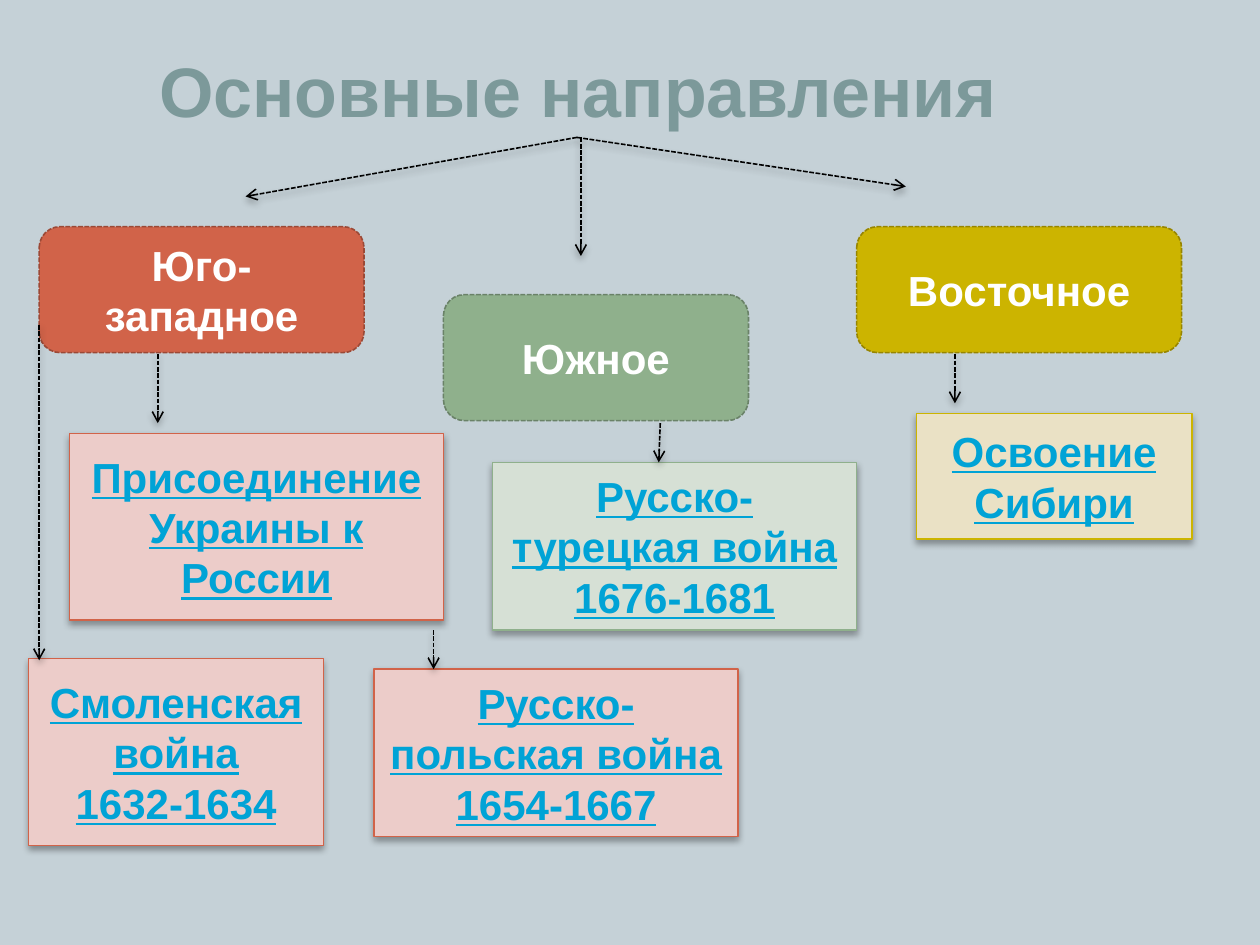
"""Build a slide mapping the main directions of foreign policy to their events."""
import pptx
import pptx.dml.color
import pptx.enum.dml
import pptx.enum.shapes
import pptx.enum.text
import pptx.oxml
import pptx.oxml.ns
import pptx.util

Cm = pptx.util.Cm
Pt = pptx.util.Pt
RGBColor = pptx.dml.color.RGBColor
Shape = pptx.enum.shapes.MSO_SHAPE
Anchor = pptx.enum.text.MSO_ANCHOR

BACKGROUND = RGBColor(0xC5, 0xD1, 0xD7)
HEADING = RGBColor(0x7C, 0x99, 0x9A)
BLACK = RGBColor(0, 0, 0)
WHITE = RGBColor(0xFF, 0xFF, 0xFF)
LINK = RGBColor(0x00, 0xA3, 0xD6)
RED = RGBColor(0xD1, 0x63, 0x49)
DARK_RED = RGBColor(0x9B, 0x49, 0x36)
PALE_RED = RGBColor(0xEC, 0xCC, 0xC9)
GREEN = RGBColor(0x8F, 0xB0, 0x8C)
DARK_GREEN = RGBColor(0x6A, 0x82, 0x68)
PALE_GREEN = RGBColor(0xD6, 0xE0, 0xD5)
GOLD = RGBColor(0xCC, 0xB4, 0x00)
DARK_GOLD = RGBColor(0x97, 0x85, 0x00)
PALE_GOLD = RGBColor(0xEA, 0xE1, 0xC5)

SHADOW = (
    f'<a:effectLst {pptx.oxml.ns.nsdecls("a")}>'
    f'<a:outerShdw blurRad="{Pt(4)}" dist="{Pt(2)}" dir="5400000" rotWithShape="0">'
    '<a:srgbClr val="000000"><a:alpha val="35000"/></a:srgbClr>'
    "</a:outerShdw></a:effectLst>"
)
ARROWHEAD = f'<a:tailEnd {pptx.oxml.ns.nsdecls("a")} type="arrow"/>'


class DirectionsSlide:
    """Holds the style and the slide, and draws each kind of element."""

    font_name = "Arial"
    title_size = Pt(40)
    text_size = Pt(24)
    dashed_width = Pt(0.9)
    card_width = Pt(0.75)

    def __init__(self, slide):
        self.slide = slide
        slide.background.fill.solid()
        slide.background.fill.fore_color.rgb = BACKGROUND

    def label(self, shape, text, size, color, anchor=Anchor.MIDDLE, underline=None):
        frame = shape.text_frame
        frame.word_wrap = True
        frame.vertical_anchor = anchor
        frame.text = text
        for paragraph in frame.paragraphs:
            paragraph.alignment = pptx.enum.text.PP_ALIGN.CENTER
            font = paragraph.font
            font.name, font.size, font.bold = self.font_name, size, True
            font.underline = underline
            font.color.rgb = color

    def dash(self, line, color):
        line.color.rgb = color
        line.width = self.dashed_width
        line.dash_style = pptx.enum.dml.MSO_LINE.SQUARE_DOT

    def cast_shadow(self, shape):
        shape.element.spPr.append(pptx.oxml.parse_xml(SHADOW))

    def box(self, kind, place, fill):
        shape = self.slide.shapes.add_shape(kind, *map(Cm, place))
        shape.fill.solid()
        shape.fill.fore_color.rgb = fill
        return shape

    def title(self, text, place):
        heading = self.slide.shapes.add_textbox(*map(Cm, place))
        self.label(heading, text, self.title_size, HEADING, Anchor.BOTTOM)

    def direction(self, text, place, fill, edge):
        block = self.box(Shape.ROUNDED_RECTANGLE, place, fill)
        block.shadow.inherit = False
        self.dash(block.line, edge)
        self.label(block, text, self.text_size, WHITE)

    def event(self, text, place, fill, edge):
        card = self.box(Shape.RECTANGLE, place, fill)
        card.line.color.rgb = edge
        card.line.width = self.card_width
        self.cast_shadow(card)
        self.label(card, text, self.text_size, LINK, underline=True)

    def arrow(self, *ends):
        connector = self.slide.shapes.add_connector(
            pptx.enum.shapes.MSO_CONNECTOR.STRAIGHT, *map(Cm, ends))
        self.dash(connector.line, BLACK)
        connector.element.spPr.ln.append(pptx.oxml.parse_xml(ARROWHEAD))
        self.cast_shadow(connector)


def main():
    deck = pptx.Presentation()
    deck.slide_width, deck.slide_height = Cm(25.4), Cm(19.05)
    page = DirectionsSlide(deck.slides.add_slide(deck.slide_layouts[6]))

    page.title("Основные направления", (1.27, 0.76, 20.75, 2.01))

    directions = [
        ("Юго-западное", (0.79, 4.57, 6.55, 2.54), RED, DARK_RED),
        ("Южное", (8.94, 5.94, 6.15, 2.54), GREEN, DARK_GREEN),
        ("Восточное", (17.27, 4.57, 6.55, 2.54), GOLD, DARK_GOLD),
    ]
    for direction in directions:
        page.direction(*direction)

    events = [
        ("Присоединение Украины к России", (1.4, 8.74, 7.54, 3.76), PALE_RED, RED),
        ("Русско-польская война 1654-1667", (7.54, 13.49, 7.34, 3.38), PALE_RED, RED),
        ("Смоленская война\n1632-1634", (0.58, 13.28, 5.94, 3.76), PALE_RED, RED),
        ("Русско-турецкая война 1676-1681", (9.93, 9.32, 7.34, 3.38), PALE_GREEN, GREEN),
        ("Освоение Сибири", (18.47, 8.33, 5.56, 2.54), PALE_GOLD, GOLD),
    ]
    for event in events:
        page.event(*event)

    arrows = [
        (11.63, 2.77, 4.95, 3.96),
        (11.71, 2.77, 11.71, 5.16),
        (11.63, 2.77, 18.26, 3.76),
        (3.18, 7.14, 3.18, 8.53),
        (0.79, 6.55, 0.79, 13.31),
        (8.74, 12.7, 8.74, 13.49),
        (13.31, 8.53, 13.28, 9.32),
        (19.25, 7.14, 19.25, 8.13),
    ]
    for ends in arrows:
        page.arrow(*ends)

    deck.save("out.pptx")


if __name__ == "__main__":
    main()
